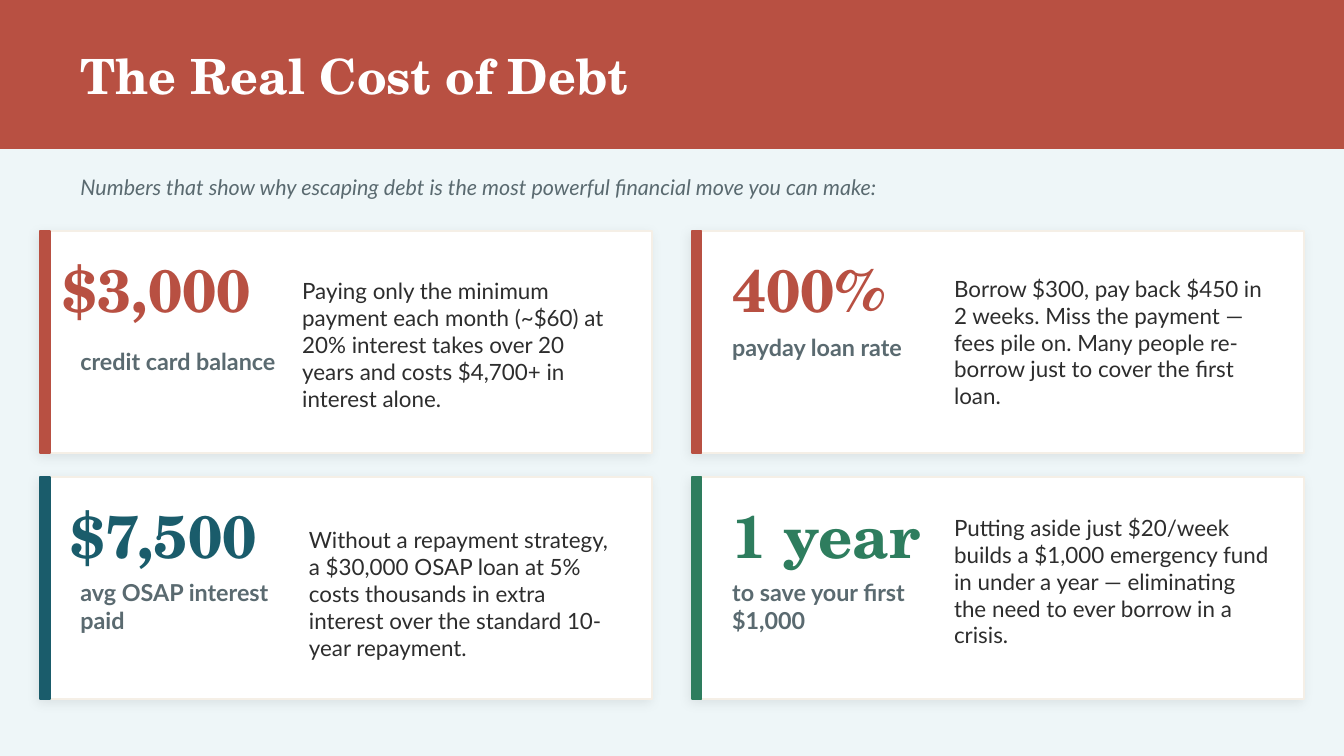
from lxml import etree
from pptx import Presentation
from pptx.dml.color import RGBColor
from pptx.enum.shapes import MSO_SHAPE
from pptx.enum.text import MSO_ANCHOR, MSO_AUTO_SIZE, PP_ALIGN
from pptx.oxml.ns import qn
from pptx.util import Inches, Pt

RECTANGLE = MSO_SHAPE.RECTANGLE
MIDDLE = MSO_ANCHOR.MIDDLE
LEFT = PP_ALIGN.LEFT
NO_AUTOFIT = MSO_AUTO_SIZE.NONE

COLORS = {
    "background": "EEF6F8",
    "red": "B85042",
    "teal": "1A5C6B",
    "green": "2E7D5E",
    "white": "FFFFFF",
    "card_border": "F5EFE6",
    "muted": "5A6A70",
    "text": "2D2D2D",
    "shadow": "000000",
}

TITLE = "The Real Cost of Debt"
SUBTITLE = "Numbers that show why escaping debt is the most powerful financial move you can make:"
CARDS = [
    {
        "color": "red",
        "figure": ("$3,000", 0.07, 0.1, 1.97),
        "label": ("credit card balance", 0.2, 0.83),
        "detail": ("Paying only the minimum payment each month (~$60) at 20% interest "
                   "takes over 20 years and costs $4,700+ in interest alone.", 1.85, 0.17),
    },
    {
        "color": "red",
        "figure": ("400%", 0.2, 0.1, 1.75),
        "label": ("payday loan rate", 0.2, 0.72),
        "detail": ("Borrow $300, pay back $450 in 2 weeks. Miss the payment — fees pile on. "
                   "Many people re-borrow just to cover the first loan.", 1.85, 0.15),
    },
    {
        "color": "teal",
        "figure": ("$7,500", 0.13, 0.1, 1.97),
        "label": ("avg OSAP interest paid", 0.2, 0.82),
        "detail": ("Without a repayment strategy, a $30,000 OSAP loan at 5% costs thousands "
                   "in extra interest over the standard 10-year repayment.", 1.9, 0.19),
    },
    {
        "color": "green",
        "figure": ("1 year", 0.2, 0.1, 2.14),
        "label": ("to save your first $1,000", 0.2, 0.82),
        "detail": ("Putting aside just $20/week builds a $1,000 emergency fund in under a year — "
                   "eliminating the need to ever borrow in a crisis.", 1.85, 0.1),
    },
]

SERIF, SANS = "TeX Gyre Schola", "Lato"
FORMATS = {
    "title": {"name": SERIF, "size": Pt(26), "bold": True},
    "subtitle": {"name": SANS, "size": Pt(11.5), "italic": True},
    "figure": {"name": SERIF, "size": Pt(32), "bold": True},
    "label": {"name": SANS, "size": Pt(12.5), "bold": True},
    "detail": {"name": SANS, "size": Pt(12)},
}
FRAME = {"word_wrap": True, "auto_size": NO_AUTOFIT, "vertical_anchor": MIDDLE}

SLIDE_WIDTH = 10
SLIDE_HEIGHT = SLIDE_WIDTH * 9 / 16
BAND_HEIGHT = 1.1
TEXT_LEFT, TEXT_WIDTH = 0.5, 9
COLUMNS = 2
MARGIN, GRID_TOP = 0.3, 1.72
COLUMN_GAP, ROW_GAP = 0.3, 0.18
CARD_WIDTH = (SLIDE_WIDTH - 2 * MARGIN - COLUMN_GAP) / COLUMNS
CARD_HEIGHT = 1.65
ACCENT_WIDTH = 0.07
FIGURE_HEIGHT = 0.65
LABEL_SIZE = (1.7, 0.28)
DETAIL_SIZE = (2.55, 1.35)


def rgb(color):
    return RGBColor.from_string(COLORS[color])


def add_rectangle(slide, box, fill, border):
    shape = slide.shapes.add_shape(RECTANGLE, *map(Inches, box))
    shape.shadow.inherit = False
    shape.fill.solid()
    shape.fill.fore_color.rgb = rgb(fill)
    shape.line.color.rgb = rgb(border)
    shape.line.width = Pt(1)
    return shape


def add_soft_shadow(shape):
    effects = shape.element.spPr.find(qn("a:effectLst"))
    shadow = etree.SubElement(effects, qn("a:outerShdw"), {
        "blurRad": str(Pt(6)), "dist": str(Pt(2)), "dir": str(135 * 60000),
        "algn": "bl", "rotWithShape": "0",
    })
    color = etree.SubElement(shadow, qn("a:srgbClr"), val=COLORS["shadow"])
    etree.SubElement(color, qn("a:alpha"), val="8000")


def write_text(shape, text, style, color):
    frame = shape.text_frame
    for attribute, value in FRAME.items():
        setattr(frame, attribute, value)
    paragraph = frame.paragraphs[0]
    paragraph.alignment = LEFT
    run = paragraph.add_run()
    run.text = text
    for attribute, value in FORMATS[style].items():
        setattr(run.font, attribute, value)
    run.font.color.rgb = rgb(color)


def add_text(slide, box, text, style, color):
    write_text(slide.shapes.add_textbox(*map(Inches, box)), text, style, color)


def add_header(slide):
    title = slide.shapes.title
    band = add_rectangle(slide, (0, 0, SLIDE_WIDTH, BAND_HEIGHT), "red", "red")
    title.element.addprevious(band.element)
    title.left, title.top, title.width, title.height = map(
        Inches, (TEXT_LEFT, 0.2, TEXT_WIDTH, 0.72))
    write_text(title, TITLE, "title", "white")
    add_text(slide, (TEXT_LEFT, 1.2, TEXT_WIDTH, 0.38), SUBTITLE, "subtitle", "muted")


def add_card(slide, index, card):
    row, column = divmod(index, COLUMNS)
    left = MARGIN + column * (CARD_WIDTH + COLUMN_GAP)
    top = GRID_TOP + row * (CARD_HEIGHT + ROW_GAP)
    color = card["color"]
    panel = add_rectangle(slide, (left, top, CARD_WIDTH, CARD_HEIGHT), "white", "card_border")
    add_soft_shadow(panel)
    add_rectangle(slide, (left, top, ACCENT_WIDTH, CARD_HEIGHT), color, color)

    *figure, figure_width = card["figure"]
    parts = [
        ("figure", figure, (figure_width, FIGURE_HEIGHT), color),
        ("label", card["label"], LABEL_SIZE, "muted"),
        ("detail", card["detail"], DETAIL_SIZE, "text"),
    ]
    for style, (text, x, y), size, text_color in parts:
        add_text(slide, (left + x, top + y, *size), text, style, text_color)


def main():
    presentation = Presentation()
    presentation.slide_width = Inches(SLIDE_WIDTH)
    presentation.slide_height = Inches(SLIDE_HEIGHT)
    slide = presentation.slides.add_slide(presentation.slide_layouts.get_by_name("Title Only"))
    slide.background.fill.solid()
    slide.background.fill.fore_color.rgb = rgb("background")
    add_header(slide)
    for index, card in enumerate(CARDS):
        add_card(slide, index, card)
    presentation.save("out.pptx")


if __name__ == "__main__":
    main()
